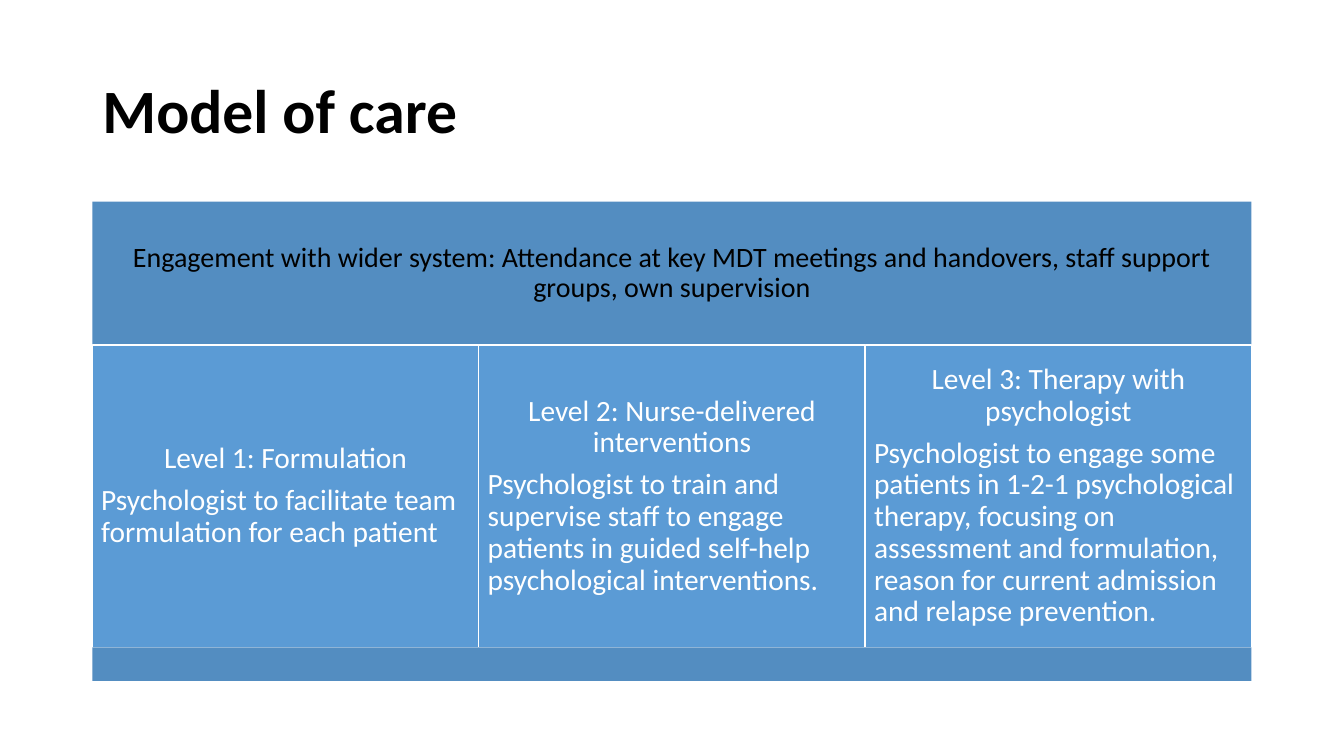
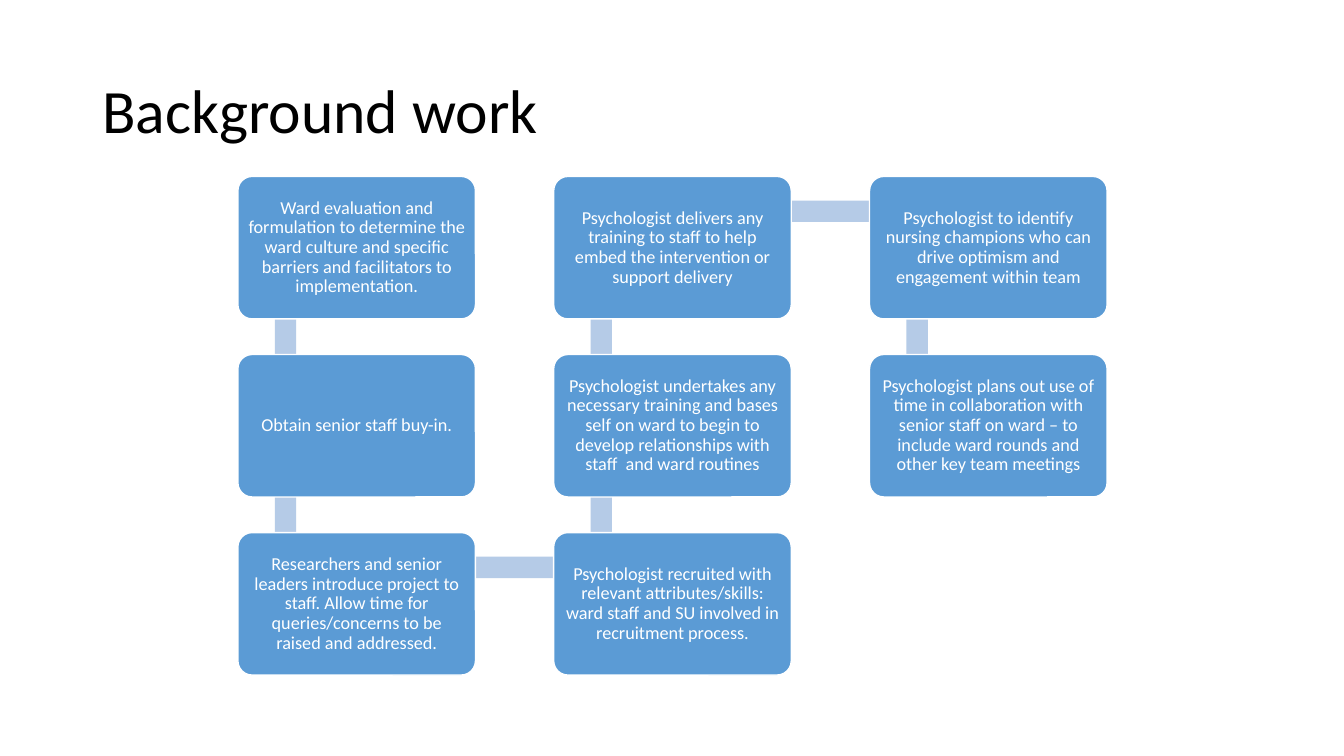
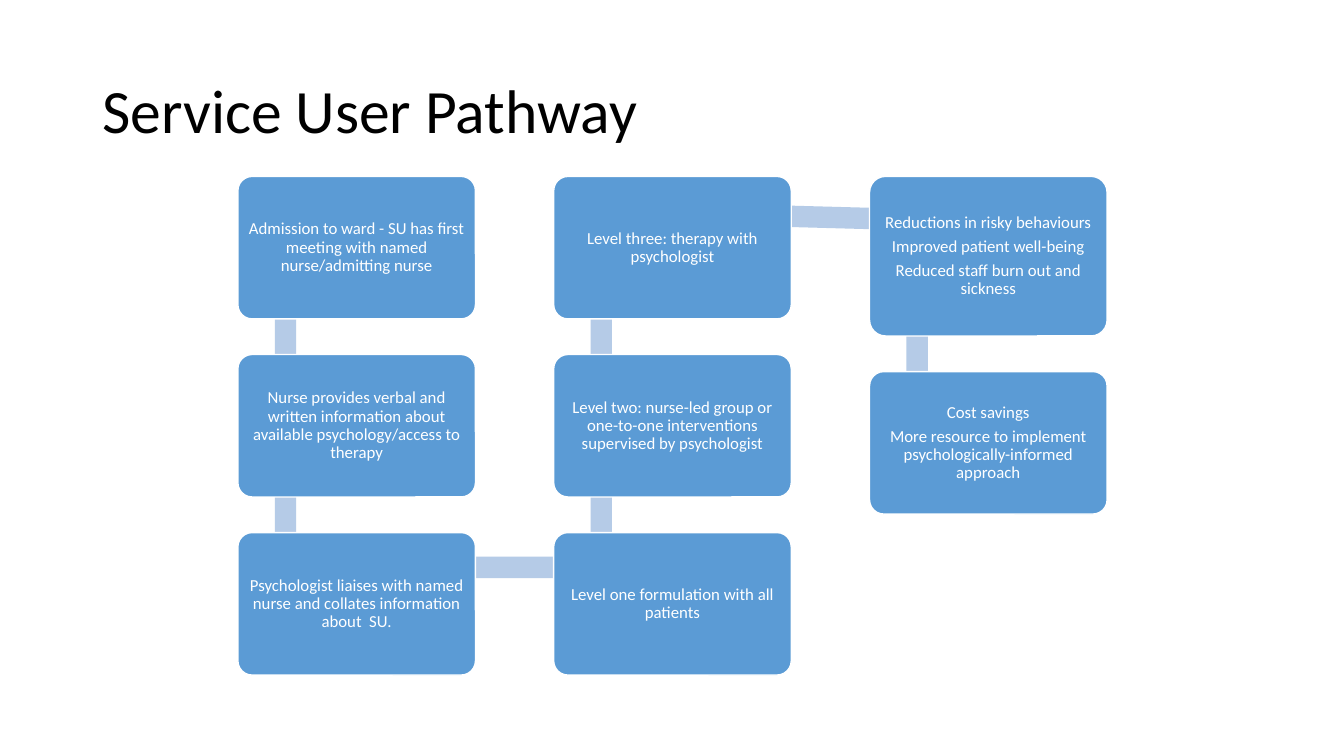
from itertools import pairwise
from math import atan2, degrees, hypot

from pptx import Presentation
from pptx.dml.color import RGBColor
from pptx.enum.shapes import MSO_SHAPE
from pptx.enum.text import MSO_ANCHOR, PP_ALIGN
from pptx.util import Pt

HUES = {"ink": "000000", "paper": "FFFFFF", "band": "538DC1",
        "box": "5B9BD5", "link": "B5CBE7"}

LEFT, WIDE = 66, 828
BAND_TOP, BAND_TALL = 144, 102.4
TIER_TALL, FOOT_TALL = 216, 24

BOX_LEFT, BOX_TOP = 169.9, 126
BOX_WIDE, BOX_TALL = 169.7, 101.8
GAP_X, GAP_Y = 55.9, 25.4
LINK_X, LINK_RISE, LINK_TALL = 34, 26, 15.3


class Deck:
    """Hold the deck style and the current slide, and draw each kind of element."""

    def __init__(self):
        self.deck = Presentation()
        self.deck.slide_width, self.deck.slide_height = Pt(960), Pt(540)
        self.slide = None

    def style(self, para, size, hue, align, bold=False):
        para.alignment = align
        para.line_spacing = 0.9
        for run in para.runs:
            font = run.font
            font.name, font.size, font.bold = "Calibri", Pt(size), bold
            font.color.rgb = RGBColor.from_string(HUES[hue])

    def page(self, title, bold=False):
        self.slide = self.deck.slides.add_slide(self.deck.slide_layouts[5])
        head = self.slide.shapes.title
        head.left, head.top, head.width, head.height = Pt(LEFT), Pt(28.75), Pt(WIDE), Pt(104.4)
        frame = head.text_frame
        frame.text = title
        frame.vertical_anchor = MSO_ANCHOR.MIDDLE
        self.style(frame.paragraphs[0], 44, "ink", PP_ALIGN.LEFT, bold)

    def shape(self, kind, left, top, wide, tall, fill, edge=None):
        item = self.slide.shapes.add_shape(kind, Pt(left), Pt(top), Pt(wide), Pt(tall))
        item.shadow.inherit = False
        item.fill.solid()
        item.fill.fore_color.rgb = RGBColor.from_string(HUES[fill])
        if edge:
            item.line.color.rgb = RGBColor.from_string(HUES[edge])
            item.line.width = Pt(1)
        else:
            item.line.fill.background()
        return item

    def label(self, item, text, size, hue, rest=PP_ALIGN.CENTER):
        frame = item.text_frame
        frame.text = text
        frame.word_wrap = True
        frame.vertical_anchor = MSO_ANCHOR.MIDDLE
        pad = Pt(size * 0.3)
        frame.margin_left = frame.margin_right = pad
        frame.margin_top = frame.margin_bottom = pad
        for rank, para in enumerate(frame.paragraphs):
            self.style(para, size, hue, rest if rank else PP_ALIGN.CENTER)
            para.space_after = Pt(size * 0.35)

    def tiers(self, lead, texts):
        band = self.shape(MSO_SHAPE.RECTANGLE, LEFT, BAND_TOP, WIDE, BAND_TALL, "band")
        self.label(band, lead, 20, "ink")
        top, wide = BAND_TOP + BAND_TALL, WIDE / len(texts)
        for col, text in enumerate(texts):
            tier = self.shape(MSO_SHAPE.RECTANGLE, LEFT + col * wide, top, wide,
                              TIER_TALL, "box", "paper")
            self.label(tier, text, 21, "paper", PP_ALIGN.LEFT)
        self.shape(MSO_SHAPE.RECTANGLE, LEFT, top + TIER_TALL, WIDE, FOOT_TALL, "band")

    def link(self, start, end):
        run, rise = end[0] - start[0], end[1] - start[1]
        span = hypot(run, rise)
        mid_x, mid_y = start[0] + run / 2, start[1] + rise / 2
        bar = self.shape(MSO_SHAPE.RECTANGLE, mid_x - span / 2, mid_y - LINK_TALL / 2,
                         span, LINK_TALL, "link")
        bar.rotation = degrees(atan2(rise, run))

    def snake(self, texts, size, talls=None):
        spots = []
        for rank in range(len(texts)):
            col, step = divmod(rank, 3)
            row = 2 - step if col % 2 else step
            tall = (talls or {}).get(rank, BOX_TALL)
            top = BOX_TOP + row * (BOX_TALL + GAP_Y)
            if step and not col % 2:
                top = spots[-1][1] + spots[-1][2] + GAP_Y
            spots.append((BOX_LEFT + col * (BOX_WIDE + GAP_X), top, tall))
        knots = [(left + LINK_X, top + tall / 2 - LINK_RISE) for left, top, tall in spots]
        for start, end in pairwise(knots):
            self.link(start, end)
        for text, (left, top, tall) in zip(texts, spots):
            box = self.shape(MSO_SHAPE.ROUNDED_RECTANGLE, left, top, BOX_WIDE, tall,
                             "box", "paper")
            box.adjustments[0] = 0.1
            self.label(box, text, size, "paper")


def main():
    deck = Deck()

    deck.page("Model of care", bold=True)
    deck.tiers(
        "Engagement with wider system: Attendance at key MDT meetings and handovers, "
        "staff support groups, own supervision",
        ["Level 1: Formulation\n"
         "Psychologist to facilitate team formulation for each patient",
         "Level 2: Nurse-delivered interventions\n"
         "Psychologist to train and supervise staff to engage patients in guided "
         "self-help psychological interventions.",
         "Level 3: Therapy with psychologist\n"
         "Psychologist to engage some patients in 1-2-1 psychological therapy, focusing "
         "on assessment and formulation, reason for current admission and relapse "
         "prevention."])

    deck.page("Background work")
    deck.snake(
        ["Ward evaluation and formulation to determine the ward culture and specific "
         "barriers and facilitators to implementation.",
         "Obtain senior staff buy-in.",
         "Researchers and senior leaders introduce project to staff. Allow time for "
         "queries/concerns to be raised and addressed.",
         "Psychologist recruited with relevant attributes/skills: ward staff and SU "
         "involved in recruitment process.",
         "Psychologist undertakes any necessary training and bases self on ward to "
         "begin to develop relationships with staff  and ward routines",
         "Psychologist delivers any training to staff to help embed the intervention "
         "or support delivery",
         "Psychologist to identify nursing champions who can drive optimism and "
         "engagement within team",
         "Psychologist plans out use of time in collaboration with senior staff on "
         "ward – to include ward rounds and other key team meetings"], 13)

    deck.page("Service User Pathway")
    deck.snake(
        ["Admission to ward - SU has first meeting with named nurse/admitting nurse",
         "Nurse provides verbal and written information about available "
         "psychology/access to therapy",
         "Psychologist liaises with named nurse and collates information about  SU.",
         "Level one formulation with all patients",
         "Level two: nurse-led group or one-to-one interventions supervised by "
         "psychologist",
         "Level three: therapy with psychologist",
         "Reductions in risky behaviours\nImproved patient well-being\n"
         "Reduced staff burn out and sickness",
         "Cost savings\nMore resource to implement psychologically-informed approach"],
        12, {6: 114})

    deck.deck.save("out.pptx")


if __name__ == "__main__":
    main()
